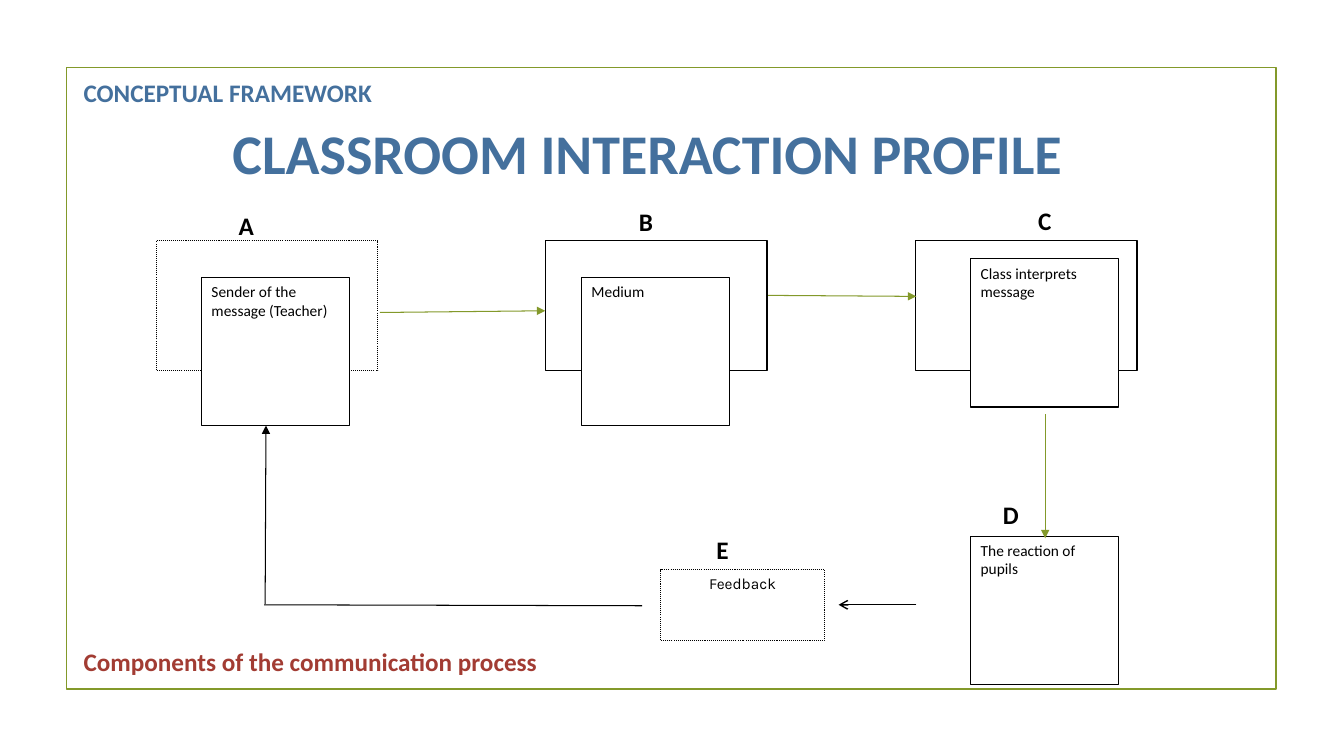
from dataclasses import dataclass

from lxml.etree import SubElement
from pptx import Presentation
from pptx.dml.color import RGBColor
from pptx.enum.dml import MSO_LINE_DASH_STYLE as Dash
from pptx.enum.shapes import MSO_CONNECTOR_TYPE as Connector
from pptx.enum.shapes import MSO_SHAPE as Shape
from pptx.enum.text import MSO_ANCHOR as Anchor
from pptx.enum.text import MSO_AUTO_SIZE as AutoSize
from pptx.enum.text import PP_ALIGN as Align
from pptx.oxml.ns import qn
from pptx.slide import Slide
from pptx.text.text import TextFrame
from pptx.util import Pt


@dataclass(frozen=True)
class Theme:
    white: str = "FFFFFF"
    black: str = "000000"
    green: str = "83992A"
    blue: str = "44709D"
    red: str = "A23C33"
    font: str = "Calibri"
    feedback_font: str = "Karla"
    title_size: float = 40
    heading_size: float = 18
    box_size: float = 11
    thin: float = 0.75


THEME = Theme()


@dataclass(frozen=True)
class Box:
    left: float
    top: float
    width: float
    height: float
    text: str = ""
    dotted: bool = False
    font: str = THEME.font
    align: Align = Align.LEFT


@dataclass(frozen=True)
class Arrow:
    start: tuple[float, float]
    end: tuple[float, float]
    color: str = THEME.black
    head: str = "triangle"
    width: float = THEME.thin


@dataclass(frozen=True)
class Label:
    text: str
    left: float
    top: float
    width: float = 25
    height: float = 29
    size: float = THEME.heading_size
    color: str = THEME.black
    wrap: bool = False


STAGE_TOP, STAGE_WIDTH, STAGE_HEIGHT = 172, 158.4, 93
CARD = 105.8
RIGHT_CARD_LEFT = 693.4

STAGES = [
    Box(left, STAGE_TOP, STAGE_WIDTH, STAGE_HEIGHT, dotted=dotted)
    for left, dotted in ((111.6, True), (389.5, False), (653.8, False))
]
CARDS = [
    Box(left, top, CARD, CARD, text)
    for left, top, text in (
        (144, 198, "Sender of the message (Teacher)"),
        (415.4, 198, "Medium"),
        (RIGHT_CARD_LEFT, 185, "Class interprets message"),
        (RIGHT_CARD_LEFT, 383, "The reaction of pupils"),
    )
]
FEEDBACK = Box(472, 406.8, 117, 51, "Feedback", True, THEME.feedback_font, Align.CENTER)

ARROWS = [
    Arrow((458.6, 432.7), (188.6, 432), head="none"),
    Arrow((189.4, 431.5), (190, 304)),
    Arrow((654.5, 432), (599, 432), head="arrow", width=1),
    Arrow((271.4, 223.2), (389.5, 222), THEME.green),
    Arrow((548.6, 211), (654.5, 211.7), THEME.green),
    Arrow((746.6, 296), (746.6, 384.5), THEME.green),
]

LABELS = [
    Label("CLASSROOM INTERACTION PROFILE", 159, 81.4, 640, 55.4, THEME.title_size, THEME.blue, True),
    Label("CONCEPTUAL FRAMEWORK", 52.6, 52, 230, color=THEME.blue, wrap=True),
    Label("A", 163.4, 147),
    Label("B", 449.3, 144),
    Label("C", 734.4, 143.3),
    Label("D", 709.2, 352.8),
    Label("E", 504.7, 378),
    Label("Components of the communication process", 52.6, 458, 419, color=THEME.red, wrap=True),
]


def write_text(frame: TextFrame, text: str, *, size: float, color: str,
               font: str = THEME.font, bold: bool = False,
               align: Align = Align.LEFT, after: float = 0, wrap: bool = True) -> None:
    frame.word_wrap = wrap
    frame.vertical_anchor = Anchor.TOP
    para = frame.paragraphs[0]
    para.alignment = align
    para.space_after = Pt(after)
    span = para.add_run()
    span.text = text
    span.font.name = font
    span.font.size = Pt(size)
    span.font.bold = bold
    span.font.color.rgb = RGBColor.from_string(color)


def draw_frame(page: Slide) -> None:
    frame = page.shapes.add_shape(Shape.RECTANGLE, Pt(47.5), Pt(48.2), Pt(864), Pt(444.2))
    frame.shadow.inherit = False
    frame.fill.background()
    frame.line.color.rgb = RGBColor.from_string(THEME.green)
    frame.line.width = Pt(1.25)


def draw_box(page: Slide, box: Box) -> None:
    shape = page.shapes.add_shape(
        Shape.RECTANGLE, Pt(box.left), Pt(box.top), Pt(box.width), Pt(box.height))
    shape.shadow.inherit = False
    shape.fill.solid()
    shape.fill.fore_color.rgb = RGBColor.from_string(THEME.white)
    shape.line.color.rgb = RGBColor.from_string(THEME.black)
    shape.line.width = Pt(THEME.thin)
    if box.dotted:
        shape.line.dash_style = Dash.ROUND_DOT
    if box.text:
        write_text(shape.text_frame, box.text, size=THEME.box_size, color=THEME.black,
                   font=box.font, align=box.align, after=4)


def draw_arrow(page: Slide, arrow: Arrow) -> None:
    points = [Pt(value) for value in (*arrow.start, *arrow.end)]
    connector = page.shapes.add_connector(Connector.STRAIGHT, *points)
    connector.line.color.rgb = RGBColor.from_string(arrow.color)
    connector.line.width = Pt(arrow.width)
    SubElement(connector.line._get_or_add_ln(), qn("a:tailEnd"), type=arrow.head)
    SubElement(connector._element.spPr, qn("a:effectLst"))


def draw_label(page: Slide, label: Label) -> None:
    box = page.shapes.add_textbox(
        Pt(label.left), Pt(label.top), Pt(label.width), Pt(label.height))
    box.text_frame.auto_size = AutoSize.SHAPE_TO_FIT_TEXT
    write_text(box.text_frame, label.text, size=label.size, color=label.color,
               bold=True, wrap=label.wrap)


def main() -> None:
    deck = Presentation()
    deck.slide_width, deck.slide_height = Pt(960), Pt(540)
    page = deck.slides.add_slide(deck.slide_layouts[6])
    draw_frame(page)
    for box in (*STAGES, *CARDS, FEEDBACK):
        draw_box(page, box)
    for arrow in ARROWS:
        draw_arrow(page, arrow)
    for label in LABELS:
        draw_label(page, label)
    deck.save("out.pptx")


if __name__ == "__main__":
    main()
